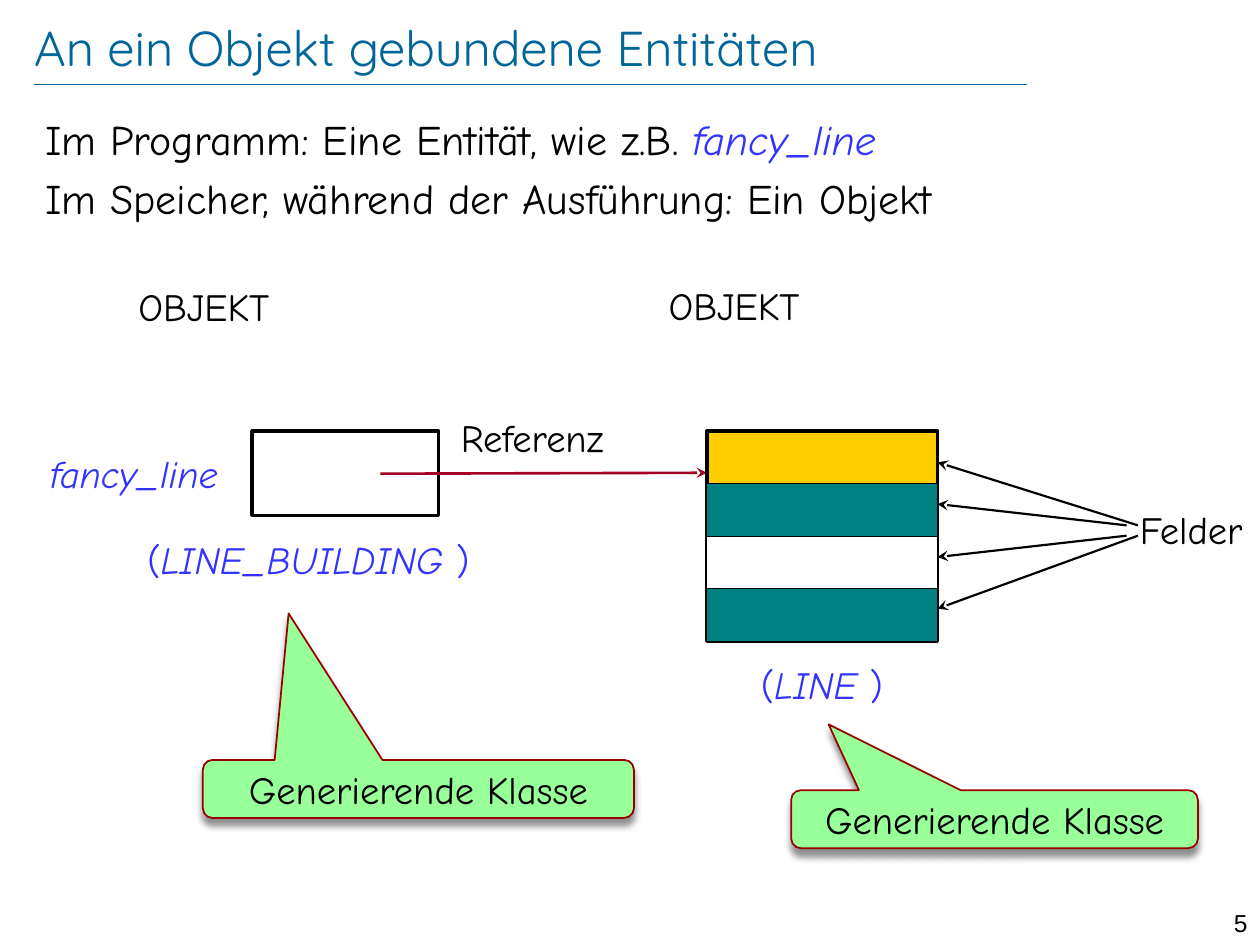
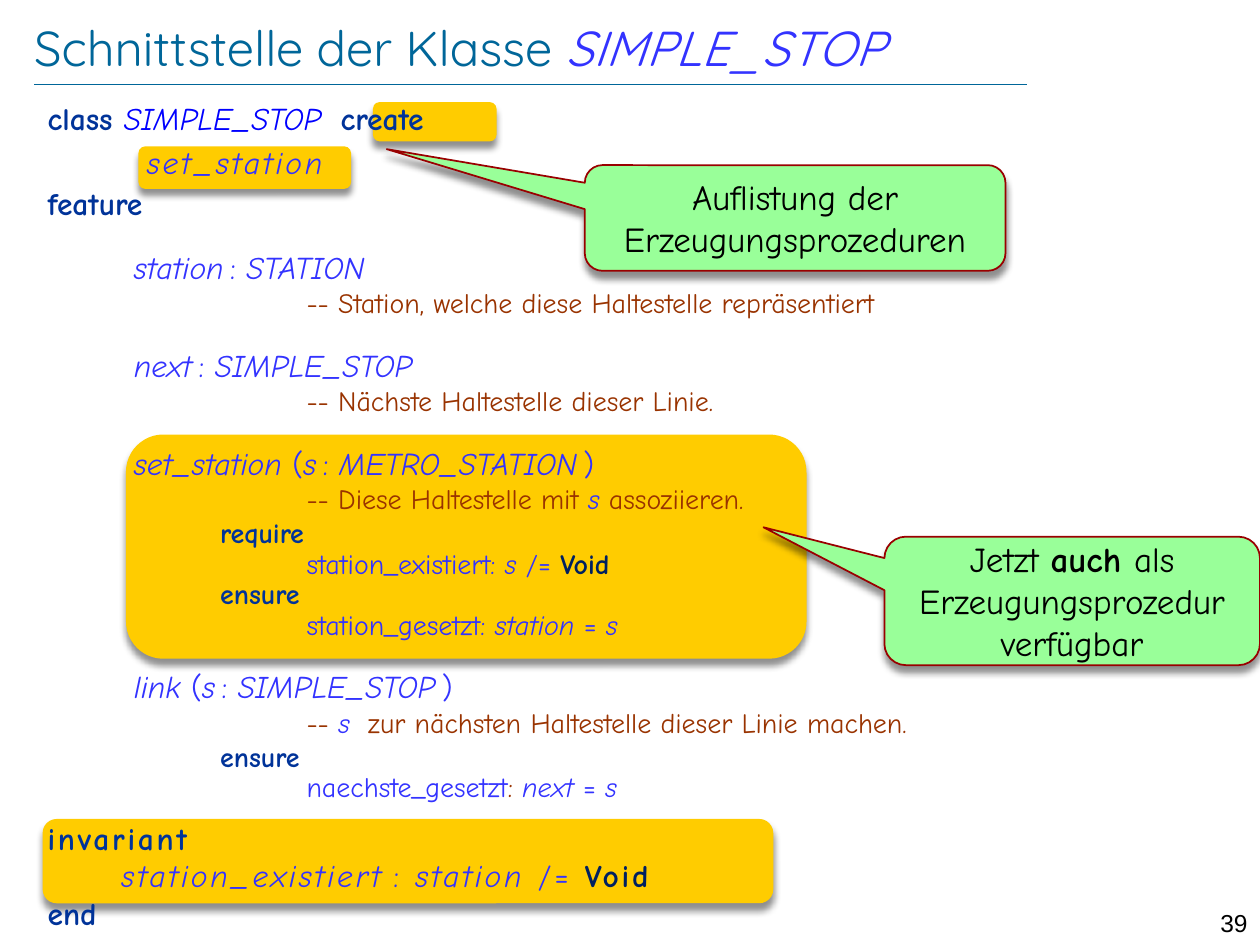
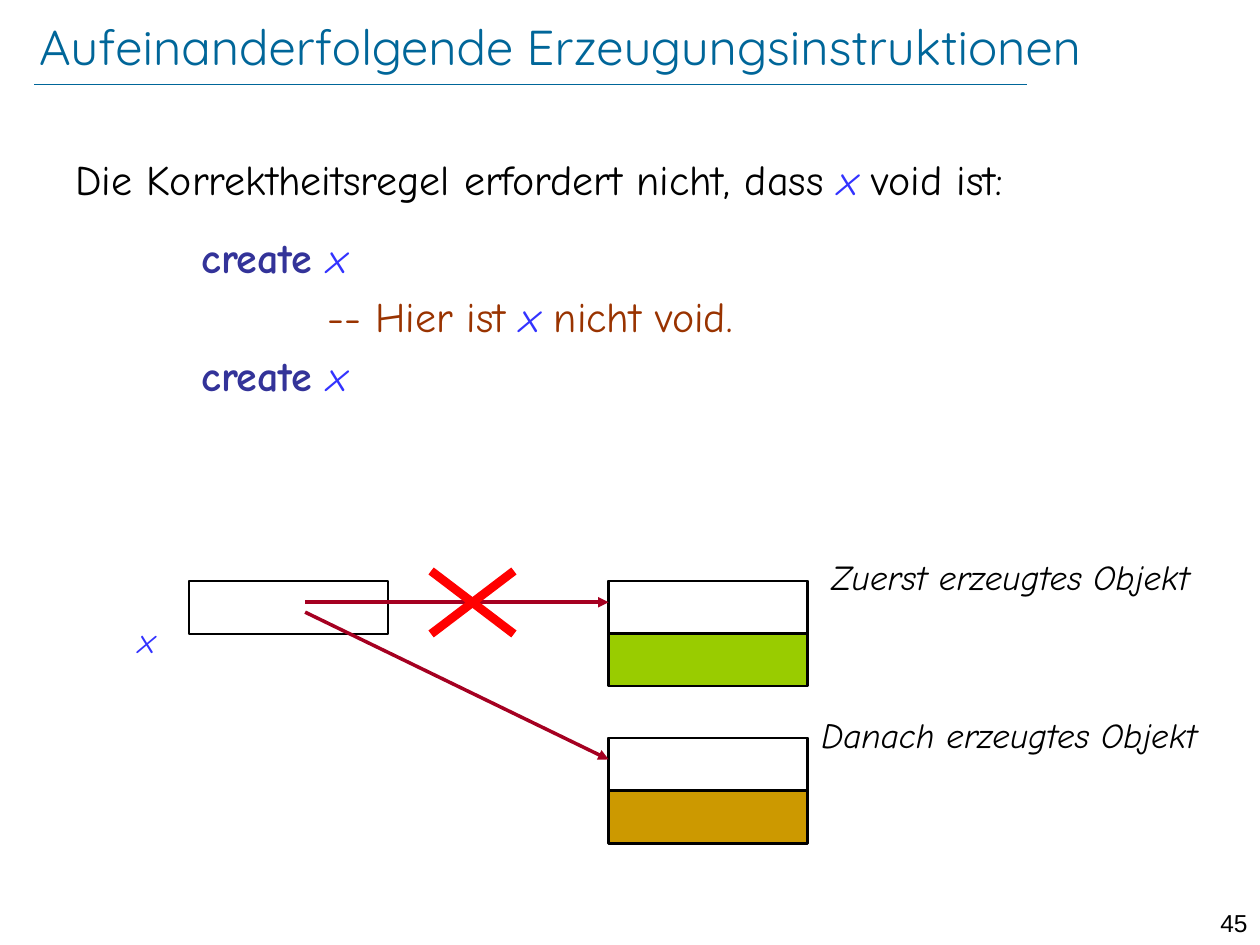
from dataclasses import dataclass

from lxml.etree import SubElement
from pptx import Presentation
from pptx.dml.color import RGBColor
from pptx.enum.shapes import MSO_CONNECTOR, MSO_SHAPE
from pptx.enum.text import MSO_ANCHOR, MSO_AUTO_SIZE, PP_ALIGN
from pptx.oxml.ns import qn
from pptx.util import Cm, Pt

BLACK = RGBColor(0x00, 0x00, 0x00)
WHITE = RGBColor(0xFF, 0xFF, 0xFF)
PETROL = RGBColor(0x00, 0x66, 0x99)
BLUE = RGBColor(0x33, 0x33, 0xFF)
PURE = RGBColor(0x00, 0x00, 0xFF)
NAVY = RGBColor(0x00, 0x33, 0x99)
DARK = RGBColor(0x00, 0x20, 0x60)
INDIGO = RGBColor(0x33, 0x33, 0x99)
BROWN = RGBColor(0x99, 0x33, 0x00)
WINE = RGBColor(0xA5, 0x00, 0x21)
MAROON = RGBColor(0x99, 0x00, 0x00)
MINT = RGBColor(0x99, 0xFF, 0x99)
YELLOW = RGBColor(0xFF, 0xCC, 0x00)
TEAL = RGBColor(0x00, 0x80, 0x80)
LIME = RGBColor(0x99, 0xCC, 0x00)
OCHRE = RGBColor(0xCC, 0x99, 0x00)
RED = RGBColor(0xFF, 0x00, 0x00)

PLAIN = {}
HEAD = {"name": "Quicksand", "color": PETROL}
FOOT = {"name": "Arial"}
BOLD = {"bold": True}
SLANT = {"italic": True}
IDENT = {"color": BLUE, "italic": True}
SIGN = {"color": BLUE}
THIN = {"color": BLUE, "size": 11}
WORD = {"color": NAVY, "bold": True}
VOID = {"color": DARK, "bold": True}
MAKE = {"color": INDIGO, "bold": True}
NOTE = {"color": BROWN}
GAP = {"spc": 500}


@dataclass
class Line:
    """One paragraph: its runs and its layout."""
    runs: list
    size: float = 22
    before: float = 0
    indent: float = 0
    lead: float = 1
    align: PP_ALIGN = PP_ALIGN.LEFT
    spc: int = 0


def style(run, looks):
    """Set the font of a run from a dict."""
    for key, value in looks.items():
        if key == "color":
            run.font.color.rgb = value
        elif key == "spc":
            run.font.language_id = None
            run._r.get_or_add_rPr().set("spc", str(value))
        else:
            setattr(run.font, key, Pt(value) if key == "size" else value)


def write(frame, lines):
    """Fill a text frame with lines."""
    for num, line in enumerate(lines):
        par = frame.add_paragraph() if num else frame.paragraphs[0]
        looks = {"alignment": line.align, "line_spacing": line.lead,
                 "space_before": Pt(line.before)}
        for key, value in looks.items():
            setattr(par, key, value)
        if line.indent:
            par._p.get_or_add_pPr().set("marL", str(Cm(line.indent)))
        base = {"name": "Comic Neue", "size": line.size, "color": BLACK}
        if line.spc:
            base["spc"] = line.spc
        for text, look in line.runs:
            run = par.add_run()
            run.text = text
            style(run, {**base, **look})


def label(slide, box, *lines):
    """Add a wrapped text box."""
    frame = slide.shapes.add_textbox(*map(Cm, box)).text_frame
    frame.word_wrap = True
    write(frame, lines)


def block(slide, box, fill=None, edge=None, width=1, kind=MSO_SHAPE.RECTANGLE):
    """Add a flat preset shape."""
    shape = slide.shapes.add_shape(kind, *map(Cm, box))
    if fill is None:
        shape.fill.background()
    else:
        shape.fill.solid()
        shape.fill.fore_color.rgb = fill
    if edge is None:
        shape.line.fill.background()
    else:
        shape.line.color.rgb = edge
        shape.line.width = Pt(width)
    shape.shadow.inherit = False
    return shape


def shade(shape):
    """Give a shape a soft shadow below."""
    list_ = shape.element.spPr.find(qn("a:effectLst"))
    drop = SubElement(list_, qn("a:outerShdw"), blurRad=str(Pt(4)),
                      dist=str(Pt(4)), dir="5400000", rotWithShape="0")
    tint = SubElement(drop, qn("a:srgbClr"), val=str(BLACK))
    SubElement(tint, qn("a:alpha"), val="43000")


def band(slide, box):
    """Add a yellow highlight."""
    shade(block(slide, box, YELLOW, kind=MSO_SHAPE.ROUNDED_RECTANGLE))


def bubble(slide, box, tip, runs, size):
    """Add a green callout whose tip is relative to its box."""
    shape = block(slide, box, MINT, MAROON,
                  kind=MSO_SHAPE.ROUNDED_RECTANGULAR_CALLOUT)
    for num, value in enumerate((*tip, 0.167)):
        shape.adjustments[num] = value
    shade(shape)
    frame = shape.text_frame
    looks = {"margin_left": 0, "margin_right": 0, "word_wrap": True,
             "vertical_anchor": MSO_ANCHOR.MIDDLE}
    for key, value in looks.items():
        setattr(frame, key, value)
    write(frame, [Line(runs, size, align=PP_ALIGN.CENTER)])


def link(slide, start, end, color, width, tail=None):
    """Add a straight line, with an arrowhead if wanted."""
    line = slide.shapes.add_connector(
        MSO_CONNECTOR.STRAIGHT, *map(Cm, (*start, *end)))
    line.line.color.rgb = color
    line.line.width = Pt(width)
    props = line.element.spPr
    if tail:
        SubElement(props.find(qn("a:ln")), qn("a:tailEnd"), type=tail)
    SubElement(props, qn("a:effectLst"))


def page(deck, runs, num, box=(0.69, 0.33, 22.76, 1.22)):
    """Start a slide with title, rule and number."""
    slide = deck.slides.add_slide(deck.slide_layouts[5])
    title = slide.shapes.title
    sides = ("left", "top", "width", "height")
    for key, value in zip(sides, box):
        setattr(title, key, Cm(value))
    frame = title.text_frame
    looks = {"margin_left": 0, "margin_top": 0, "margin_right": 0,
             "margin_bottom": 0, "word_wrap": True,
             "auto_size": MSO_AUTO_SIZE.NONE,
             "vertical_anchor": MSO_ANCHOR.MIDDLE}
    for key, value in looks.items():
        setattr(frame, key, value)
    write(frame, [Line([(text, {**HEAD, **look}) for text, look in runs], 28)])
    link(slide, (0.69, 1.7), (20.7, 1.7), PETROL, 0.25)
    label(slide, (24, 18.19, 1.4, 0.61),
          Line([(str(num), FOOT)], 14, align=PP_ALIGN.RIGHT))
    return slide


def source(slide, box):
    """Draw the referring object with its labels."""
    left, top, wide, high = box
    block(slide, box, edge=BLACK, width=2)
    link(slide, (left + 2.59, top + 0.86), (left + 9.17, top + 0.84),
         WINE, 1.5, "stealth")
    for dx, dy, width, runs in (
            (-2.54, -3.1, 4.06, [("OBJEKT", PLAIN)]),
            (-4.32, 0.25, 4.45, [("fancy_line", IDENT)]),
            (3.96, -0.46, 4.72, [("Referenz", PLAIN)]),
            (-2.36, 2, 7.8,
             [("(", SIGN), ("LINE_BUILDING ", IDENT), (")", SIGN)])):
        label(slide, (left + dx, top + dy, width, 1.19), Line(runs))


def target(slide, box):
    """Draw the object with four fields and its labels."""
    left, top, wide, high = box
    row = high / 4
    block(slide, box, YELLOW, BLACK, 2)
    for num, fill in enumerate((TEAL, WHITE, TEAL), 1):
        block(slide, (left, top + num * row, wide, row), fill, BLACK, 0.75)
    for dx, dy, tip in ((8.69, 1.9, 0.63), (8.46, 1.9, 1.47),
                        (8.46, 2.11, 2.54), (8.69, 2.11, 3.58)):
        link(slide, (left + dx, top + dy), (left + wide, top + tip),
             BLACK, 1.25, "stealth")
    for dx, dy, width, runs in (
            (-1.02, -3.13, 4.06, [("OBJEKT", PLAIN)]),
            (8.48, 1.39, 2.67, [("Felder", PLAIN)]),
            (0.84, 4.52, 3.43,
             [("(", SIGN), ("LINE ", IDENT), (")", SIGN)])):
        label(slide, (left + dx, top + dy, width, 1.19), Line(runs))


def bound(deck):
    """Build the slide on entities bound to an object."""
    slide = page(deck, [("An ein Objekt gebundene Entitäten", PLAIN)], 5)
    label(slide, (0.66, 2.16, 23.39, 3),
          Line([("Im Programm: Eine Entität, wie z.B. ", PLAIN),
                ("fancy_line", IDENT)], 24),
          Line([("Im Speicher, während der Ausführung: Ein Objekt", PLAIN)],
               24, 5))
    source(slide, (5.08, 8.69, 3.76, 1.7))
    target(slide, (14.25, 8.69, 4.65, 4.24))
    for box, tip in (((15.95, 15.93, 8.2, 1.17), (-0.408, -1.635)),
                     ((4.09, 15.32, 8.69, 1.17), (-0.301, -3.024))):
        bubble(slide, box, tip, [("Generierende Klasse", PLAIN)], 22)


def query(name, kind):
    """Give the runs of an attribute."""
    return [(name, IDENT), (" ", THIN), (": ", SIGN), (kind, IDENT)]


def routine(name, kind):
    """Give the runs of a procedure with argument s."""
    return [(name + " ", IDENT), ("(", SIGN), *query("s", kind),
            (" ", THIN), (")", SIGN)]


def check(tag, *runs):
    """Give the runs of an assertion."""
    return [(tag + ": ", SIGN), *runs]


def code(slide, box):
    """Write the class text."""
    tab = 1.74
    equal = [("= ", SIGN), ("s", IDENT)]
    filled = [("/= ", SIGN), ("Void", VOID)]
    rows = (
        (0, 18, 0, [("class ", WORD), ("SIMPLE_STOP", {**IDENT, "color": PURE}),
                    (" ", GAP), ("create", WORD)]),
        (2, 18, 8, [("set_station", {**IDENT, "spc": 160})]),
        (0, 18, 6, [("feature", WORD)]),
        (tab, 18, 19.4, query("station", "STATION")),
        (3 * tab, 16, 4,
         [("-- Station, welche diese Haltestelle repräsentiert", NOTE)]),
        (tab, 18, 19.4, query("next", "SIMPLE_STOP")),
        (3 * tab, 16, 4, [("-- Nächste Haltestelle dieser Linie.", NOTE)]),
        (tab, 18, 19.4, routine("set_station", "METRO_STATION")),
        (3 * tab, 16, 4, [("-- Diese Haltestelle mit ", NOTE), ("s", IDENT),
                          (" assoziieren.", NOTE)]),
        (2 * tab, 16, 4, [("require", WORD)]),
        (3 * tab, 16, 2, check("station_existiert", ("s ", IDENT), *filled)),
        (2 * tab, 16, 2, [("ensure", WORD)]),
        (3 * tab, 16, 2, check("station_gesetzt", ("station ", IDENT), *equal)),
        (tab, 18, 19.4, routine("link", "SIMPLE_STOP")),
        (3 * tab, 16, 4,
         [("-- ", NOTE), ("s", IDENT), (" ", GAP),
          ("zur nächsten Haltestelle dieser Linie machen.", NOTE)]),
        (2 * tab, 16, 4, [("ensure", WORD)]),
        (3 * tab, 16, 2, [("naechste_gesetzt", SIGN), (": ", NOTE),
                          ("next ", IDENT), *equal]))
    lines = [Line(runs, size, before, indent, 0.8)
             for indent, size, before, runs in rows]
    lines += [Line([("invariant", WORD)], 18, 9, spc=160),
              Line([*query("station_existiert", "station "), *filled],
                   18, indent=1.49, spc=160),
              Line([("end", WORD)], 18)]
    label(slide, box, *lines)


def stop(deck):
    """Build the slide on the class interface."""
    slide = page(deck, [("Schnittstelle der Klasse ", PLAIN),
                        ("SIMPLE_STOP", IDENT)], 39)
    for box in ((0.86, 16.51, 14.73, 1.7), (2.54, 8.76, 13.72, 4.52),
                (7.52, 2.06, 2.49, 0.79), (2.79, 2.95, 4.29, 0.86)):
        band(slide, box)
    bubble(slide, (17.83, 10.82, 7.57, 2.59), (-0.822, -0.573),
           [("Jetzt ", PLAIN), ("auch ", BOLD),
            ("als Erzeugungsprozedur verfügbar", PLAIN)], 20)
    bubble(slide, (11.79, 3.33, 8.48, 2.13), (-0.971, -0.652),
           [("Auflistung der Erzeugungsprozeduren", PLAIN)], 20)
    code(slide, (0.71, 2.01, 23.06, 16.71))


def pair(slide, box, fill, note, shift):
    """Draw an object of two fields with a note at its right."""
    left, top, wide, high = box
    block(slide, box, fill, BLACK, 1.5)
    block(slide, (left, top, wide, high / 2), WHITE, BLACK, 1.5)
    start = left + wide + shift
    label(slide, (start, top - 0.63, 25.4 - start, 1.12),
          Line([(note, SLANT)], 20))


def cross(slide, box):
    """Strike out with two red lines."""
    left, top, wide, high = box
    for start, end in ((top, top + high), (top + high, top)):
        link(slide, (left, start), (left + wide, end), RED, 5)


def again(deck):
    """Build the slide on successive creation."""
    slide = page(deck, [("Aufeinanderfolgende Erzeugungsinstruktionen", PLAIN)],
                 45, (0.79, 0.28, 22.63, 1.3))
    create = [("create ", MAKE), ("x", IDENT)]
    label(slide, (1.27, 2.97, 22.86, 6.88),
          Line([("Die Korrektheitsregel erfordert nicht, dass ", PLAIN),
                ("x ", IDENT), ("void ist:", PLAIN)], 24),
          Line(create, 24, 15.5, 2.54),
          Line([("-- Hier ist ", NOTE), ("x ", IDENT), ("nicht void.", NOTE)],
               24, 5, 5.08),
          Line(create, 24, 5, 2.54))
    block(slide, (3.81, 11.71, 4.01, 1.07), edge=BLACK, width=1.5)
    label(slide, (2.54, 12.34, 1.07, 1.09), Line([("x", IDENT)], 20))
    for top, fill, note, shift, start in (
            (11.71, LIME, "Zuerst erzeugtes Objekt", 0.23, 12.14),
            (14.88, OCHRE, "Danach erzeugtes Objekt", 0.03, 12.34)):
        pair(slide, (12.27, top, 4.01, 2.12), fill, note, shift)
        link(slide, (6.15, start), (12.27, top + 0.43), WINE, 2, "triangle")
    cross(slide, (8.69, 11.51, 1.67, 1.27))


def main():
    """Build and save the slides."""
    deck = Presentation()
    deck.slide_width, deck.slide_height = Cm(25.4), Cm(19.05)
    for build in (bound, stop, again):
        build(deck)
    deck.save("out.pptx")


if __name__ == "__main__":
    main()
